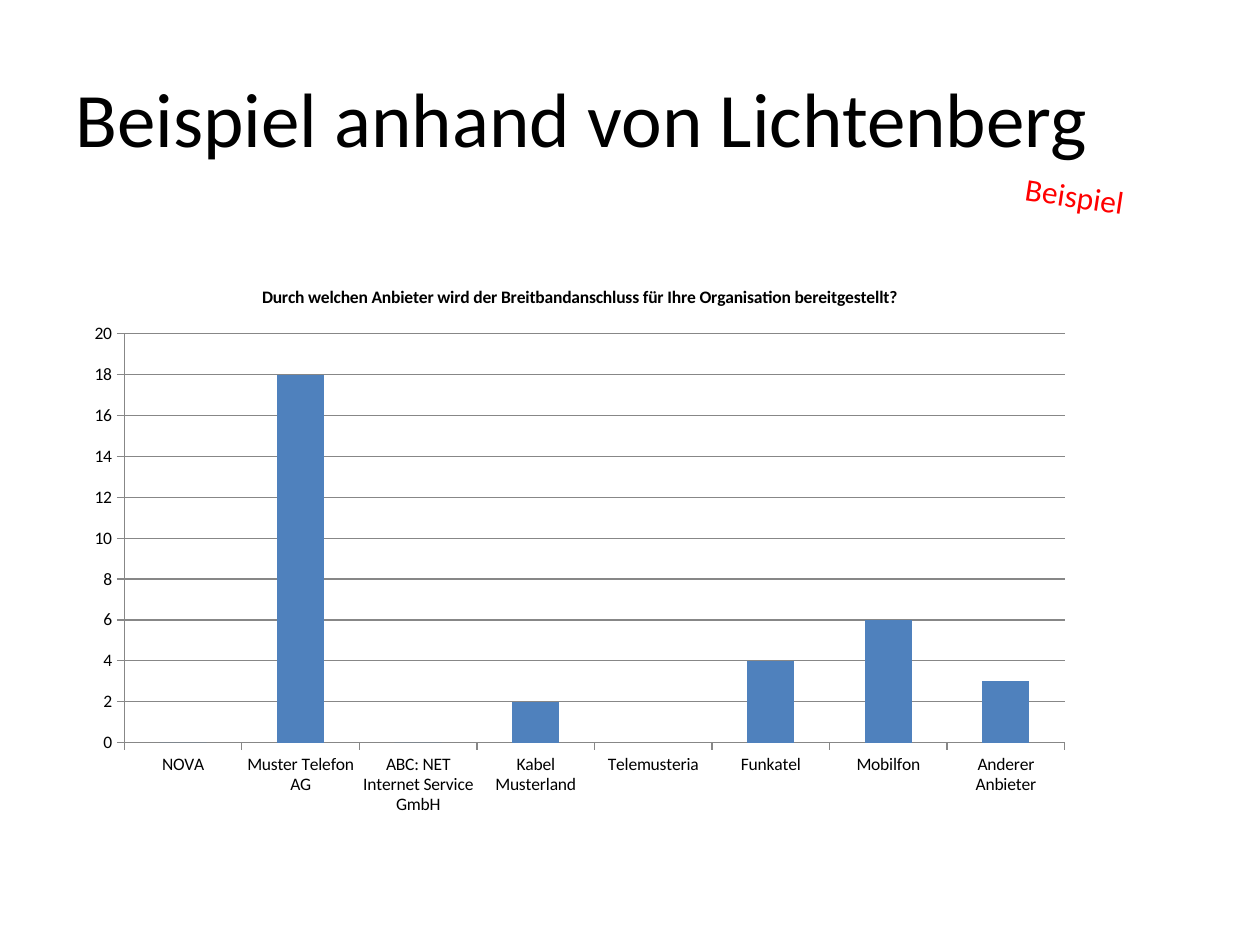
from dataclasses import dataclass

from pptx import Presentation
from pptx.chart.data import CategoryChartData
from pptx.dml.color import RGBColor
from pptx.enum.chart import XL_CHART_TYPE as ChartType, XL_TICK_MARK as TickMark
from pptx.enum.text import MSO_ANCHOR as Anchor, PP_ALIGN as Align
from pptx.slide import Slide
from pptx.util import Inches, Pt

FONT = "Calibri"
BLACK = RGBColor(0x00, 0x00, 0x00)
RED = RGBColor(0xFF, 0x00, 0x00)
BLUE = RGBColor(0x4F, 0x81, 0xBD)
GRAY = RGBColor(0x87, 0x87, 0x87)


@dataclass(frozen=True)
class Label:
    text: str
    left: float
    top: float
    width: float
    height: float
    size: int
    color: RGBColor
    align: Align
    anchor: Anchor
    rotation: float = 0


@dataclass(frozen=True)
class Provider:
    name: str
    answers: int | None


LABELS = (
    Label("Beispiel anhand von Lichtenberg", 0.5, 0.3, 9, 1.25, 44, BLACK,
          Align.LEFT, Anchor.MIDDLE),
    Label("Beispiel", 7.86, 1.35, 1.34, 0.4, 18, RED,
          Align.CENTER, Anchor.TOP, 8.6),
)
QUESTION = ("Durch welchen Anbieter wird der Breitbandanschluss "
            "für Ihre Organisation bereitgestellt?")
PROVIDERS = (
    Provider("NOVA", 0),
    Provider("Muster Telefon AG", 18),
    Provider("ABC: NET Internet Service GmbH", 0),
    Provider("Kabel Musterland", 2),
    Provider("Telemusteria", None),
    Provider("Funkatel", 4),
    Provider("Mobilfon", 6),
    Provider("Anderer Anbieter", 3),
)


def add_label(page: Slide, label: Label) -> None:
    """Draw one line of text in its own box."""
    box = page.shapes.add_textbox(Inches(label.left), Inches(label.top),
                                  Inches(label.width), Inches(label.height))
    box.rotation = label.rotation
    frame = box.text_frame
    frame.word_wrap = True
    frame.vertical_anchor = label.anchor
    para = frame.paragraphs[0]
    para.text = label.text
    para.alignment = label.align
    para.font.name = FONT
    para.font.size = Pt(label.size)
    para.font.color.rgb = label.color


def add_provider_chart(page: Slide) -> None:
    """Draw the column chart of answers per provider."""
    data = CategoryChartData()
    data.categories = [provider.name for provider in PROVIDERS]
    data.add_series("Series 1", [provider.answers for provider in PROVIDERS])
    chart = page.shapes.add_chart(ChartType.COLUMN_CLUSTERED, Inches(0.59), Inches(2.1),
                                  Inches(8.02), Inches(4.45), data).chart
    chart.has_legend = False
    chart.font.name = FONT
    chart.font.size = Pt(10)
    chart.font.color.rgb = BLACK

    chart.has_title = True
    para = chart.chart_title.text_frame.paragraphs[0]
    para.text = QUESTION
    para.font.name = FONT
    para.font.size = Pt(10)
    para.font.bold = True
    para.font.color.rgb = BLACK
    chart.chart_title.include_in_layout = False

    plot = chart.plots[0]
    plot.gap_width = 150
    plot.vary_by_categories = False
    fill = plot.series[0].format.fill
    fill.solid()
    fill.fore_color.rgb = BLUE

    values = chart.value_axis
    values.minimum_scale, values.maximum_scale, values.major_unit = 0, 20, 2
    values.has_major_gridlines = True
    for axis in (chart.category_axis, values):
        axis.major_tick_mark = TickMark.OUTSIDE
    for part in (chart.category_axis, values, values.major_gridlines):
        part.format.line.color.rgb = GRAY
        part.format.line.width = Pt(0.75)


def main() -> None:
    """Build the slide and save it."""
    deck = Presentation()
    deck.slide_width, deck.slide_height = Inches(10), Inches(7.5)
    page = deck.slides.add_slide(deck.slide_layouts[6])
    for label in LABELS:
        add_label(page, label)
    add_provider_chart(page)
    deck.save("out.pptx")


if __name__ == "__main__":
    main()
